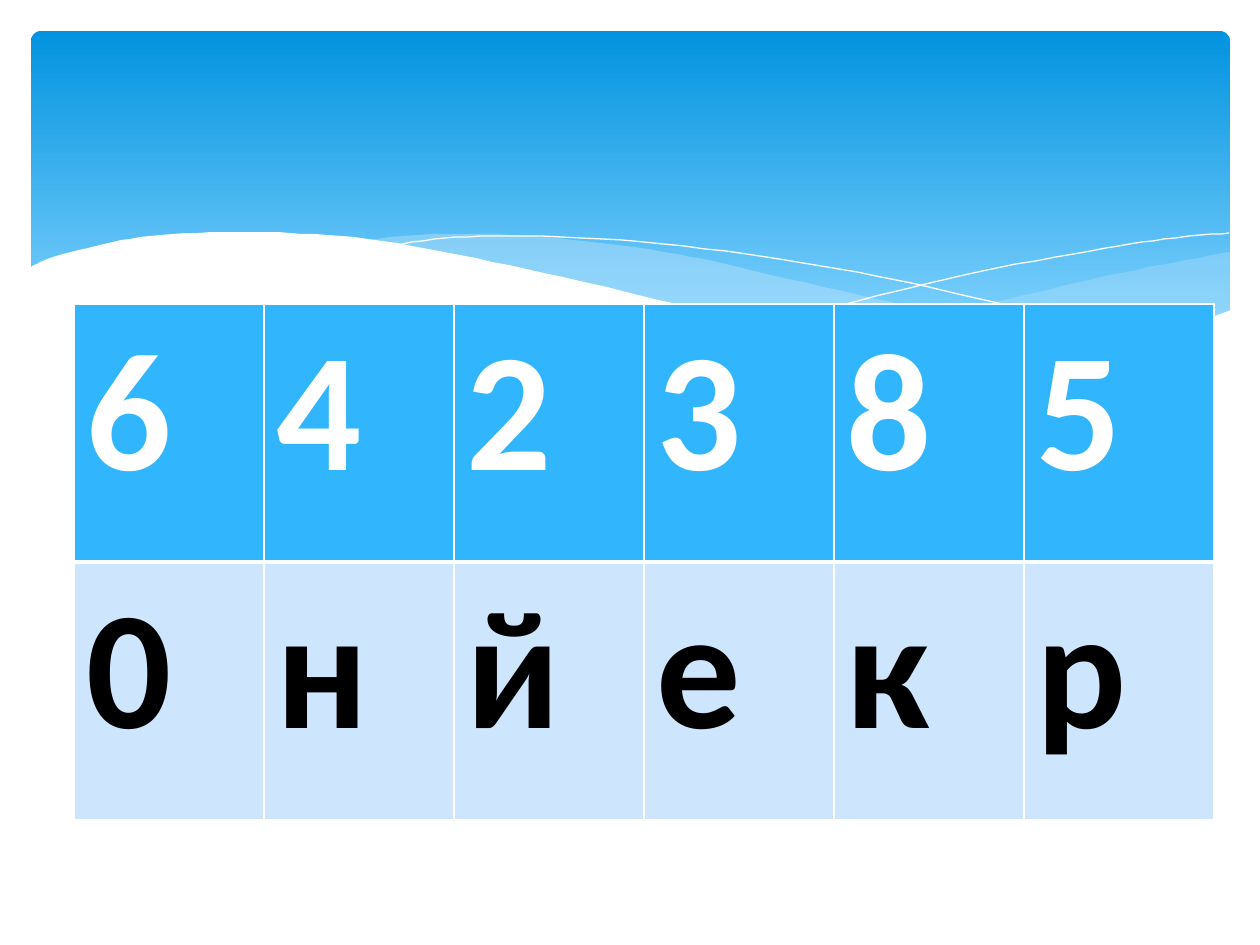
from lxml import etree
from pptx import Presentation
from pptx.dml.color import RGBColor
from pptx.enum.shapes import MSO_SHAPE
from pptx.oxml.ns import qn
from pptx.util import Pt

ROUNDED = MSO_SHAPE.ROUNDED_RECTANGLE
SCALE = 914400 / 126
COLORS = {
    "sky_top": "0293E0",
    "sky_bottom": "83D3FE",
    "mist": "C6E7FC",
    "white": "FFFFFF",
    "black": "000000",
    "header": "31B6FD",
    "body": "CEE5FE",
}
CELL_FONT = {"name": "Calibri", "size": Pt(96), "bold": True}

RIGHT_WAVE = [
    [(1230, 252), (1160, 265), (1085, 281), (949, 312), (833, 334)],
    [(833, 334), (922, 345), (1012, 350), (1099, 345), (1169, 331), (1230, 311)],
]
MIDDLE_WAVE = [
    [(360, 241), (433, 234), (529, 236), (633, 247), (717, 262), (793, 280),
     (890, 302), (1017, 328), (1125, 344)],
    [(1125, 344), (1068, 349), (989, 350), (910, 345), (819, 333), (713, 312),
     (566, 280), (456, 256), (360, 241)],
]
FALLING_LINE = [
    [(389, 246), (445, 238), (524, 236), (643, 242), (766, 257), (876, 276),
     (1002, 304), (1143, 343)],
]
RISING_LINE = [
    [(772, 324), (876, 296), (978, 272), (1091, 251), (1164, 239), (1229, 233)],
]
WHITE_WAVE = [
    [(1231, 310), (1159, 334), (1087, 345), (1019, 349), (915, 343), (816, 330),
     (699, 309), (563, 277), (460, 255), (368, 239), (290, 233), (223, 232),
     (150, 236), (96, 246), (50, 258), (29, 268)],
    [(29, 415), (1231, 415)],
]
ROWS = [
    {"text": "642385", "fill": "header", "color": "white", "top": 1, "bottom": 3},
    {"text": "0нйекр", "fill": "body", "color": "black", "top": 3, "bottom": 1},
]


def px(value):
    return round(value * SCALE)


def rgb(name):
    return RGBColor.from_string(COLORS[name])


def smooth_curve(knots, steps=6):
    ends = [knots[0], *knots, knots[-1]]
    points = [knots[0]]
    for a, b, c, d in zip(ends, ends[1:], ends[2:], ends[3:]):
        for step in range(1, steps + 1):
            t = step / steps
            points.append(tuple(
                (2 * q + (r - p) * t + (2 * p - 5 * q + 4 * r - s) * t**2
                 + (3 * q - p - 3 * r + s) * t**3) / 2
                for p, q, r, s in zip(a, b, c, d)
            ))
    return points


class SlideBuilder:
    def __init__(self, page, font):
        self.page = page
        self.font = font

    def sky(self, left, top, width, height):
        shape = self.page.shapes.add_shape(ROUNDED, *map(px, (left, top, width, height)))
        shape.shadow.inherit = False
        shape.adjustments[0] = 0.03
        shape.line.fill.background()
        shape.fill.gradient()
        shape.fill.gradient_angle = 270
        stops = zip(shape.fill.gradient_stops, (0, 0.9), ("sky_top", "sky_bottom"))
        for stop, position, color in stops:
            stop.position = position
            stop.color.rgb = rgb(color)

    def outline(self, curves, closed):
        points = [point for curve in curves for point in smooth_curve(curve)]
        builder = self.page.shapes.build_freeform(*points[0], scale=SCALE)
        builder.add_line_segments(points[1:], close=closed)
        shape = builder.convert_to_shape()
        shape.shadow.inherit = False
        return shape

    def wave(self, curves, color, opacity=100):
        shape = self.outline(curves, True)
        shape.line.fill.background()
        shape.fill.solid()
        shape.fill.fore_color.rgb = rgb(color)
        if opacity < 100:
            tint = shape.fill._xPr.find(".//" + qn("a:srgbClr"))
            etree.SubElement(tint, qn("a:alpha"), val=str(opacity * 1000))

    def thread(self, curves, color):
        shape = self.outline(curves, False)
        shape.fill.background()
        shape.line.color.rgb = rgb(color)
        shape.line.width = 0

    def border(self, cell, sides):
        properties = cell._tc.get_or_add_tcPr()
        for index, (side, points) in enumerate(sides.items()):
            line = etree.Element(qn(f"a:{side}"), w=str(Pt(points)))
            fill = etree.SubElement(line, qn("a:solidFill"))
            etree.SubElement(fill, qn("a:srgbClr"), val=COLORS["white"])
            properties.insert(index, line)

    def table(self, left, top, column_width, row_height, rows):
        columns = len(rows[0]["text"])
        size = (column_width * columns, row_height * len(rows))
        frame = self.page.shapes.add_table(
            len(rows), columns, *map(px, (left, top, *size)))
        grid = frame.table
        grid.horz_banding = False
        for column in grid.columns:
            column.width = px(column_width)
        for row, content in zip(grid.rows, rows):
            row.height = px(row_height)
            sides = {"lnL": 1, "lnR": 1, "lnT": content["top"], "lnB": content["bottom"]}
            for cell, letter in zip(row.cells, content["text"]):
                cell.fill.solid()
                cell.fill.fore_color.rgb = rgb(content["fill"])
                self.border(cell, sides)
                span = cell.text_frame.paragraphs[0].add_run()
                span.text = letter
                for key, value in self.font.items():
                    setattr(span.font, key, value)
                span.font.color.rgb = rgb(content["color"])


def main():
    deck = Presentation()
    deck.slide_width, deck.slide_height = px(1260), px(945)
    slide = SlideBuilder(deck.slides.add_slide(deck.slide_layouts[6]), CELL_FONT)
    slide.sky(31, 31, 1199, 340)
    slide.wave(RIGHT_WAVE, "mist", 29)
    slide.wave(MIDDLE_WAVE, "mist", 40)
    slide.thread(FALLING_LINE, "white")
    slide.thread(RISING_LINE, "white")
    slide.wave(WHITE_WAVE, "white")
    slide.table(74, 304, 190, 258, ROWS)
    deck.save("out.pptx")


if __name__ == "__main__":
    main()
